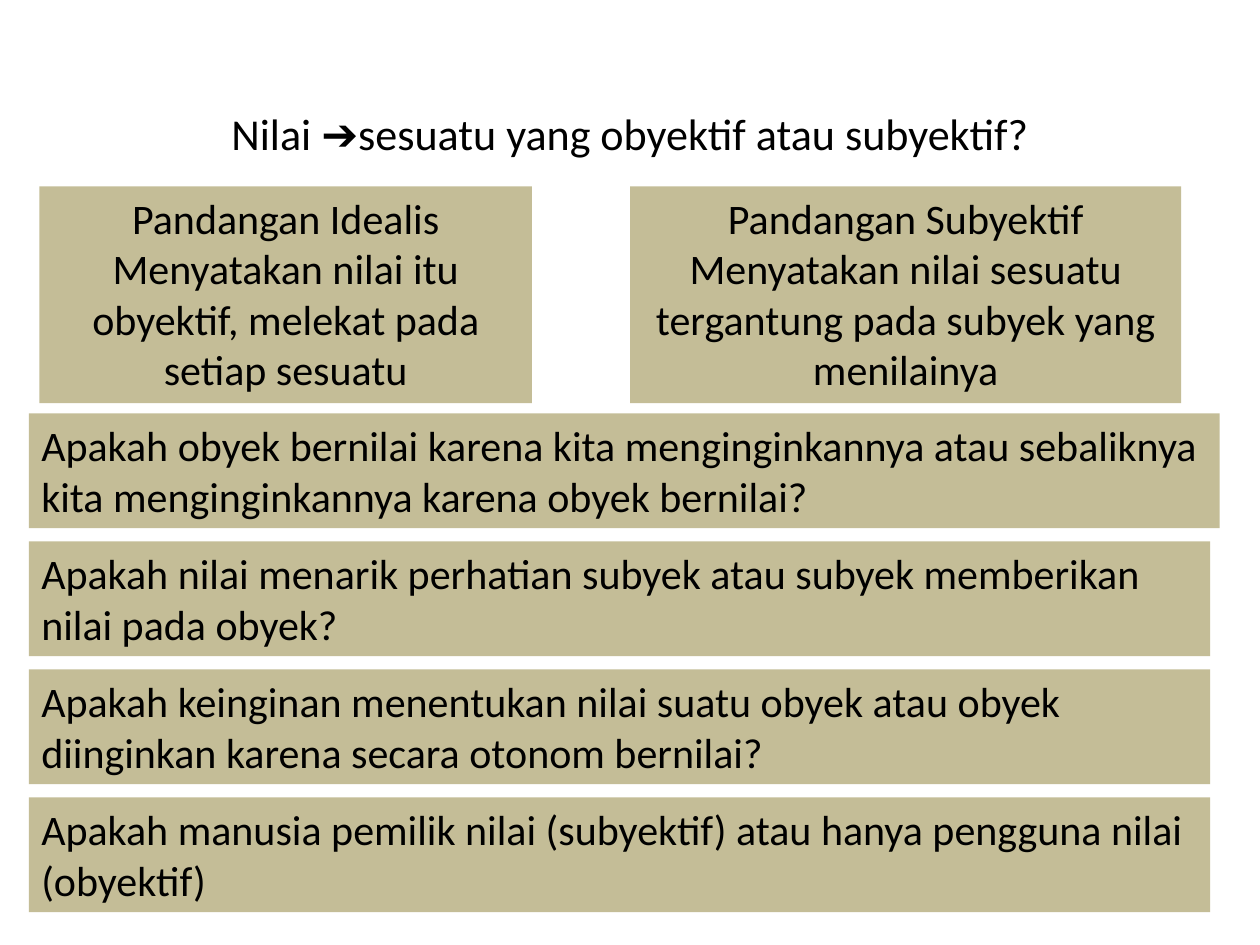
from pptx import Presentation
from pptx.dml.color import RGBColor
from pptx.enum.shapes import MSO_SHAPE
from pptx.enum.text import MSO_ANCHOR as Anchor, MSO_AUTO_SIZE as AutoSize, PP_ALIGN as Align
from pptx.util import Pt

BLACK = RGBColor(0x00, 0x00, 0x00)
SAND = RGBColor(0xC4, 0xBD, 0x97)

TITLE = "Nilai ➔sesuatu yang obyektif atau subyektif?"
VIEWS = [
    (22.5, 281.5, "Pandangan Idealis Menyatakan nilai itu obyektif, melekat pada setiap sesuatu"),
    (360, 315, "Pandangan Subyektif Menyatakan nilai sesuatu tergantung pada subyek yang menilainya"),
]
QUESTIONS = [
    (680.5, "Apakah obyek bernilai karena kita menginginkannya atau sebaliknya "
            "kita menginginkannya karena obyek bernilai?"),
    (675, "Apakah nilai menarik perhatian subyek atau subyek memberikan nilai pada obyek?"),
    (675, "Apakah keinginan menentukan nilai suatu obyek atau obyek "
          "diinginkan karena secara otonom bernilai?"),
    (675, "Apakah manusia pemilik nilai (subyektif) atau hanya pengguna nilai (obyektif)"),
]
VIEW_TOP, VIEW_HEIGHT = 106.5, 124
QUESTION_LEFT, QUESTION_TOP, QUESTION_HEIGHT, QUESTION_STEP = 16.5, 236.25, 65.5, 73.15


def apply_format(target, values):
    """Set each named attribute on the target."""
    for name, value in values.items():
        setattr(target, name, value)


def write_text(frame, wording, size, align, frame_format):
    """Fill a text frame with one formatted paragraph."""
    apply_format(frame, {"word_wrap": True, **frame_format})
    sentence = frame.paragraphs[0]
    sentence.text = wording
    sentence.alignment = align
    apply_format(sentence.font, {"name": "Calibri", "size": Pt(size)})
    sentence.font.color.rgb = BLACK


def add_title(slide, wording):
    """Add the centred heading."""
    heading = slide.shapes.add_textbox(Pt(36), Pt(55.5), Pt(648), Pt(40.5))
    write_text(heading.text_frame, wording, 25.2, Align.CENTER,
               {"vertical_anchor": Anchor.MIDDLE, "auto_size": AutoSize.NONE})


def add_panel(slide, bounds, wording, align):
    """Add a sand-coloured panel holding one statement."""
    panel = slide.shapes.add_shape(MSO_SHAPE.RECTANGLE, *map(Pt, bounds))
    panel.shadow.inherit = False
    panel.fill.solid()
    panel.fill.fore_color.rgb = SAND
    panel.line.fill.background()
    write_text(panel.text_frame, wording, 24, align,
               {"vertical_anchor": Anchor.TOP, "auto_size": AutoSize.SHAPE_TO_FIT_TEXT})


def main():
    """Build and save the slide."""
    deck = Presentation()
    apply_format(deck, {"slide_width": Pt(720), "slide_height": Pt(540)})
    slide = deck.slides.add_slide(deck.slide_layouts[6])
    add_title(slide, TITLE)
    for left, width, view in VIEWS:
        add_panel(slide, (left, VIEW_TOP, width, VIEW_HEIGHT), view, Align.CENTER)
    for row, (width, question) in enumerate(QUESTIONS):
        top = QUESTION_TOP + row * QUESTION_STEP
        add_panel(slide, (QUESTION_LEFT, top, width, QUESTION_HEIGHT), question, Align.LEFT)
    deck.save("out.pptx")


if __name__ == "__main__":
    main()
